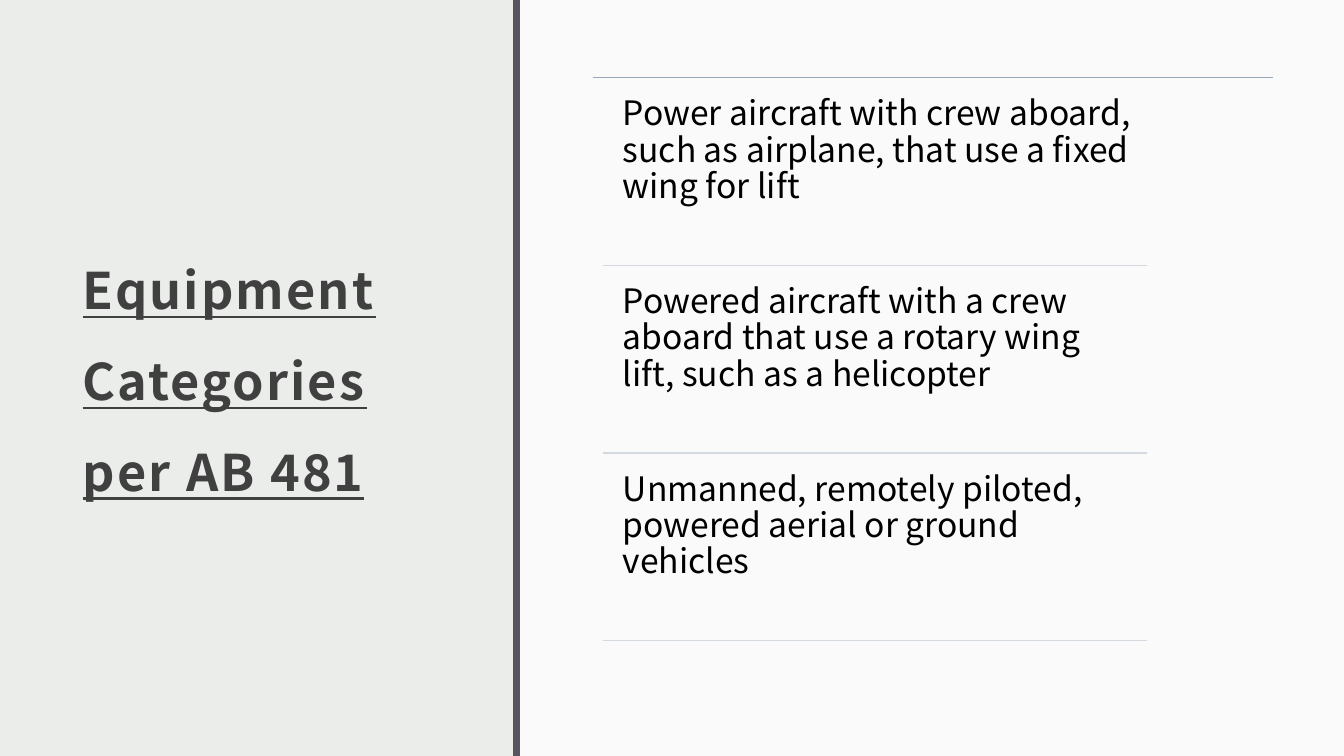
from lxml.etree import SubElement
from pptx import Presentation
from pptx.dml.color import RGBColor
from pptx.enum.shapes import MSO_CONNECTOR, MSO_SHAPE
from pptx.enum.text import MSO_ANCHOR, MSO_AUTO_SIZE, PP_ALIGN
from pptx.oxml.ns import qn
from pptx.util import Pt

CATEGORIES = [
    "Power aircraft with crew aboard, such as airplane, that use a fixed wing for lift",
    "Powered aircraft with a crew aboard that use a rotary wing lift, such as a helicopter",
    "Unmanned, remotely piloted, powered aerial or ground vehicles",
]
SLIDE_WIDTH, SLIDE_HEIGHT = 960, 540
PANEL_LEFT = 371.5
FIRST_RULE, ROW_PITCH = 55.5, 134


def color(hex_value):
    return RGBColor.from_string(hex_value)


def apply(target, values):
    """Set each named attribute of target."""
    for name, value in values.items():
        setattr(target, name, value)


class CategorySlide:
    font_name = "Noto Sans CJK JP"
    title_font = {"size": Pt(36), "bold": True, "underline": True}
    category_font = {"size": Pt(24), "bold": False}

    def __init__(self, deck, background):
        self.slide = deck.slides.add_slide(deck.slide_layouts[5])
        self.slide.background.fill.solid()
        self.slide.background.fill.fore_color.rgb = color(background)

    def block(self, left, top, width, height, fill, opacity=100):
        block = self.slide.shapes.add_shape(
            MSO_SHAPE.RECTANGLE, Pt(left), Pt(top), Pt(width), Pt(height))
        block.shadow.inherit = False
        block.line.fill.background()
        block.fill.solid()
        block.fill.fore_color.rgb = color(fill)
        if opacity < 100:
            tint = block._element.spPr.find(".//" + qn("a:srgbClr"))
            SubElement(tint, qn("a:alpha"), val=str(opacity * 1000))

    def rule(self, left, right, y, stroke):
        rule = self.slide.shapes.add_connector(
            MSO_CONNECTOR.STRAIGHT, Pt(left), Pt(y), Pt(right), Pt(y))
        rule.line.width = Pt(1)
        rule.line.color.rgb = color(stroke)
        SubElement(rule._element.spPr, qn("a:effectLst"))

    def fill_text(self, frame, text, font, ink, margins, anchor, spacing):
        """Fill a text frame with one formatted paragraph and return its run."""
        sides = ("margin_left", "margin_top", "margin_right", "margin_bottom")
        apply(frame, dict(zip(sides, map(Pt, margins))))
        apply(frame, {"word_wrap": True, "auto_size": MSO_AUTO_SIZE.NONE,
                      "vertical_anchor": anchor})
        paragraph = frame.paragraphs[0]
        apply(paragraph, {"alignment": PP_ALIGN.LEFT, "line_spacing": spacing})
        run = paragraph.add_run()
        run.text = text
        apply(run.font, {"name": self.font_name, **font})
        run.font.color.rgb = color(ink)
        return run

    def title(self, text, left, top, width, height):
        heading = self.slide.shapes.title
        apply(heading, {"left": Pt(left), "top": Pt(top),
                        "width": Pt(width), "height": Pt(height)})
        run = self.fill_text(heading.text_frame, text, self.title_font, "404040",
                             (8.64, 8.64, 8.64, 7.2), MSO_ANCHOR.MIDDLE, 1.5)
        run.font._element.set("spc", "150")

    def category(self, text, left, top, width, height):
        entry = self.slide.shapes.add_textbox(Pt(left), Pt(top), Pt(width), Pt(height))
        self.fill_text(entry.text_frame, text, self.category_font, "000000",
                       (7.2,) * 4, MSO_ANCHOR.TOP, 0.9)


def main():
    deck = Presentation()
    apply(deck, {"slide_width": Pt(SLIDE_WIDTH), "slide_height": Pt(SLIDE_HEIGHT)})
    page = CategorySlide(deck, "EBEDEB")
    page.block(PANEL_LEFT, 0, SLIDE_WIDTH - PANEL_LEFT, SLIDE_HEIGHT, "FFFFFF", opacity=75)
    page.block(PANEL_LEFT - 5, 0, 5, SLIDE_HEIGHT, "595460")
    page.title("Equipment Categories per AB 481", 50.4, 55.5, 268.5, 409)
    page.rule(423.5, 909.5, FIRST_RULE, "97A7B8")
    for row, text in enumerate(CATEGORIES):
        row_top = FIRST_RULE + row * ROW_PITCH
        page.category(text, 437.8, row_top + 6.5, 381.6, 127.5)
        page.rule(430.5, 819.4, row_top + ROW_PITCH, "D3D9DF")
    deck.save("out.pptx")


if __name__ == "__main__":
    main()
